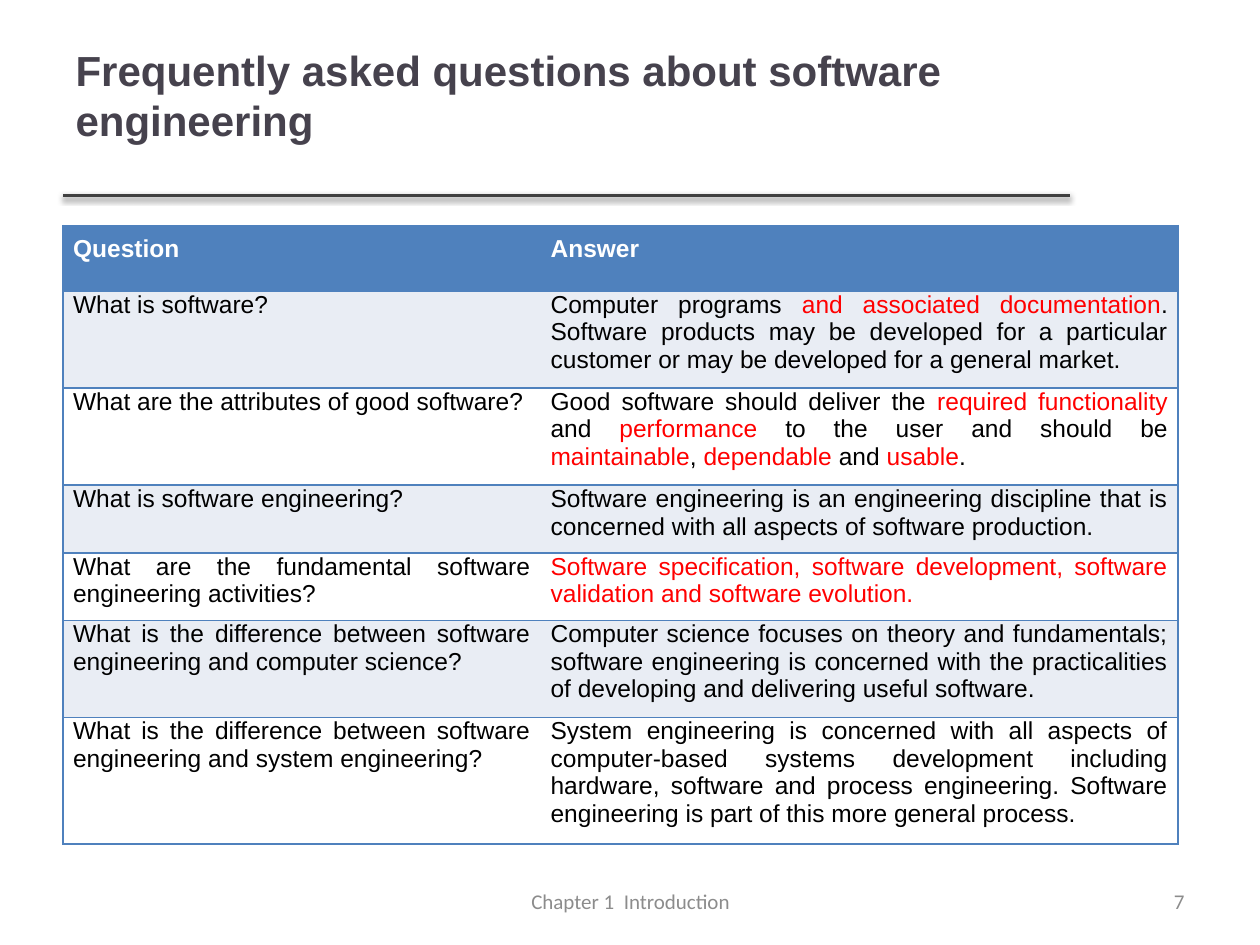
from dataclasses import dataclass

from lxml import etree
from pptx import Presentation
from pptx.dml.color import RGBColor
from pptx.enum import shapes, text
from pptx.oxml import ns
from pptx.util import Inches, Pt


@dataclass(frozen=True)
class Theme:
    title_color: str = "46424D"
    rule: str = "404040"
    accent: str = "4F81BD"
    band: str = "E9EDF4"
    white: str = "FFFFFF"
    body: str = "000000"
    highlight: str = "FF0000"
    muted: str = "8C8C8C"
    heading_font: str = "Arial"
    footer_font: str = "Calibri"
    title_size: int = 24
    table_size: int = 14
    footer_size: int = 12


THEME = Theme()
TITLE = "Frequently asked questions about software engineering"
HEADINGS = ("Question", "Answer")
# Asterisks enclose highlighted words.
FAQ = [
    ("What is software?",
     "Computer programs *and associated documentation*. Software products may be "
     "developed for a particular customer or may be developed for a general market."),
    ("What are the attributes of good software?",
     "Good software should deliver the *required functionality *and *performance* to the "
     "user and should be *maintainable*, *dependable *and *usable*."),
    ("What is software engineering?",
     "Software engineering is an engineering discipline that is concerned with all "
     "aspects of software production."),
    ("What are the fundamental software engineering activities?",
     "*Software specification, software development, software validation and software "
     "evolution.*"),
    ("What is the difference between software engineering and computer science?",
     "Computer science focuses on theory and fundamentals; software engineering is "
     "concerned with the practicalities of developing and delivering useful software."),
    ("What is the difference between software engineering and system engineering?",
     "System engineering is concerned with all aspects of computer-based systems "
     "development including hardware, software and process engineering. Software "
     "engineering is part of this more general process."),
]
COLUMN_WIDTHS = (3.79, 5.06)
ROW_HEIGHTS = (0.52, 0.67, 0.67, 0.52, 0.52, 0.67, 0.86)


def add_run(paragraph, words, size, color, font=THEME.heading_font, bold=False):
    run = paragraph.add_run()
    run.text = words
    run.font.name = font
    run.font.size = Pt(size)
    run.font.bold = bold
    run.font.color.rgb = RGBColor.from_string(color)


def add_color(parent, color):
    return etree.SubElement(parent, ns.qn("a:srgbClr"), val=color)


def set_title(slide):
    title = slide.shapes.title
    title.left, title.top = Inches(0.5), Inches(0.3)
    title.width, title.height = Inches(8.41), Inches(1.29)
    frame = title.text_frame
    frame.auto_size = text.MSO_AUTO_SIZE.NONE
    frame.vertical_anchor = text.MSO_ANCHOR.TOP
    paragraph = frame.paragraphs[0]
    paragraph.alignment = text.PP_ALIGN.LEFT
    add_run(paragraph, TITLE, THEME.title_size, THEME.title_color, bold=True)


def add_title_rule(slide):
    rule = slide.shapes.add_connector(
        shapes.MSO_CONNECTOR.STRAIGHT, Inches(0.5), Inches(1.55), Inches(8.49), Inches(1.55))
    rule.line.width = Pt(2)
    rule.line.color.rgb = RGBColor.from_string(THEME.rule)
    effects = etree.SubElement(rule._element.spPr, ns.qn("a:effectLst"))
    shadow = etree.SubElement(
        effects, ns.qn("a:outerShdw"), blurRad=str(Pt(3.1)), dist=str(Pt(1.6)),
        dir="5400000", rotWithShape="0")
    etree.SubElement(add_color(shadow, THEME.body), ns.qn("a:alpha"), val="38000")


def add_footer(slide, words, left, width, alignment):
    box = slide.shapes.add_textbox(Inches(left), Inches(6.95), Inches(width), Inches(0.4))
    frame = box.text_frame
    frame.word_wrap = True
    frame.vertical_anchor = text.MSO_ANCHOR.MIDDLE
    frame.paragraphs[0].alignment = alignment
    add_run(frame.paragraphs[0], words, THEME.footer_size, THEME.muted, THEME.footer_font)


def set_borders(cell, visible):
    """Draw the sides named in visible and hide the others."""
    properties = cell._tc.get_or_add_tcPr()
    for side in "LRTB":
        line = etree.SubElement(properties, ns.qn(f"a:ln{side}"), w=str(Pt(1)))
        if side in visible:
            add_color(etree.SubElement(line, ns.qn("a:solidFill")), THEME.accent)
        else:
            etree.SubElement(line, ns.qn("a:noFill"))


def fill_cell(cell, words, fill, borders, header):
    set_borders(cell, borders)
    cell.fill.solid()
    cell.fill.fore_color.rgb = RGBColor.from_string(fill)
    cell.margin_left = cell.margin_right = Inches(0.08)
    cell.margin_top = Inches(0.08 if header else 0)
    cell.margin_bottom = Inches(0.08 if header else 0.07)
    paragraph = cell.text_frame.paragraphs[0]
    paragraph.alignment = text.PP_ALIGN.JUSTIFY
    plain = THEME.white if header else THEME.body
    for index, part in enumerate(words.split("*")):
        if part:
            color = THEME.highlight if index % 2 else plain
            add_run(paragraph, part, THEME.table_size, color, bold=header)


def add_faq_table(slide):
    rows = [HEADINGS, *FAQ]
    table = slide.shapes.add_table(
        len(rows), len(HEADINGS), Inches(0.5), Inches(1.79),
        Inches(sum(COLUMN_WIDTHS)), Inches(sum(ROW_HEIGHTS))).table
    for column, width in zip(table.columns, COLUMN_WIDTHS):
        column.width = Inches(width)
    for r, (entry, height) in enumerate(zip(rows, ROW_HEIGHTS)):
        table.rows[r].height = Inches(height)
        header = r == 0
        fill = THEME.accent if header else THEME.band if r % 2 else THEME.white
        for c, (words, outer_side) in enumerate(zip(entry, "LR")):
            fill_cell(table.cell(r, c), words, fill, "TB" + outer_side, header)


def main():
    deck = Presentation()
    deck.slide_width, deck.slide_height = Inches(10), Inches(7.5)
    slide = deck.slides.add_slide(deck.slide_layouts.get_by_name("Title Only"))
    add_title_rule(slide)
    set_title(slide)
    add_footer(slide, "Chapter 1  Introduction", 3.42, 3.17, text.PP_ALIGN.CENTER)
    add_footer(slide, "7", 7.17, 2.33, text.PP_ALIGN.RIGHT)
    add_faq_table(slide)
    deck.save("out.pptx")


if __name__ == "__main__":
    main()
